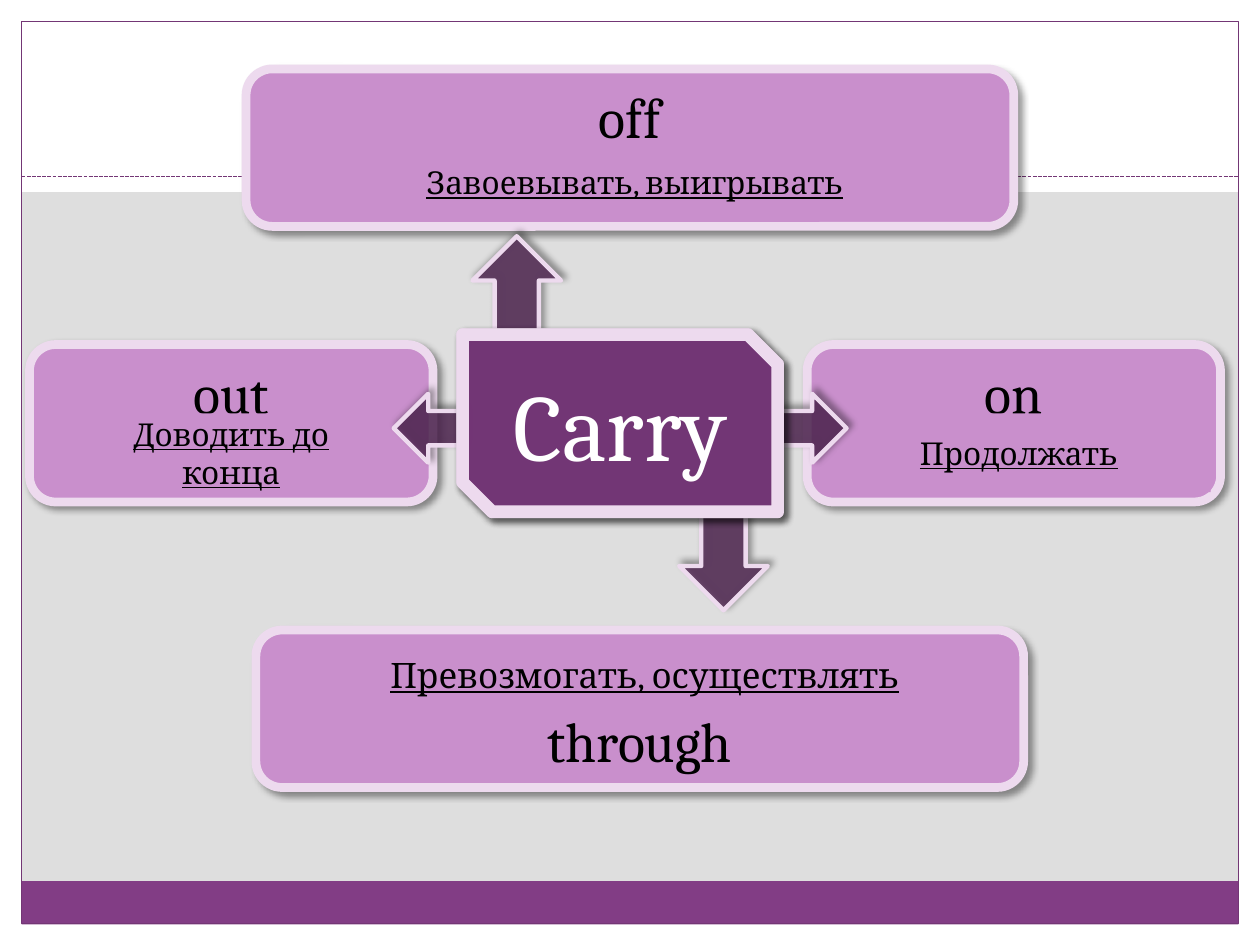
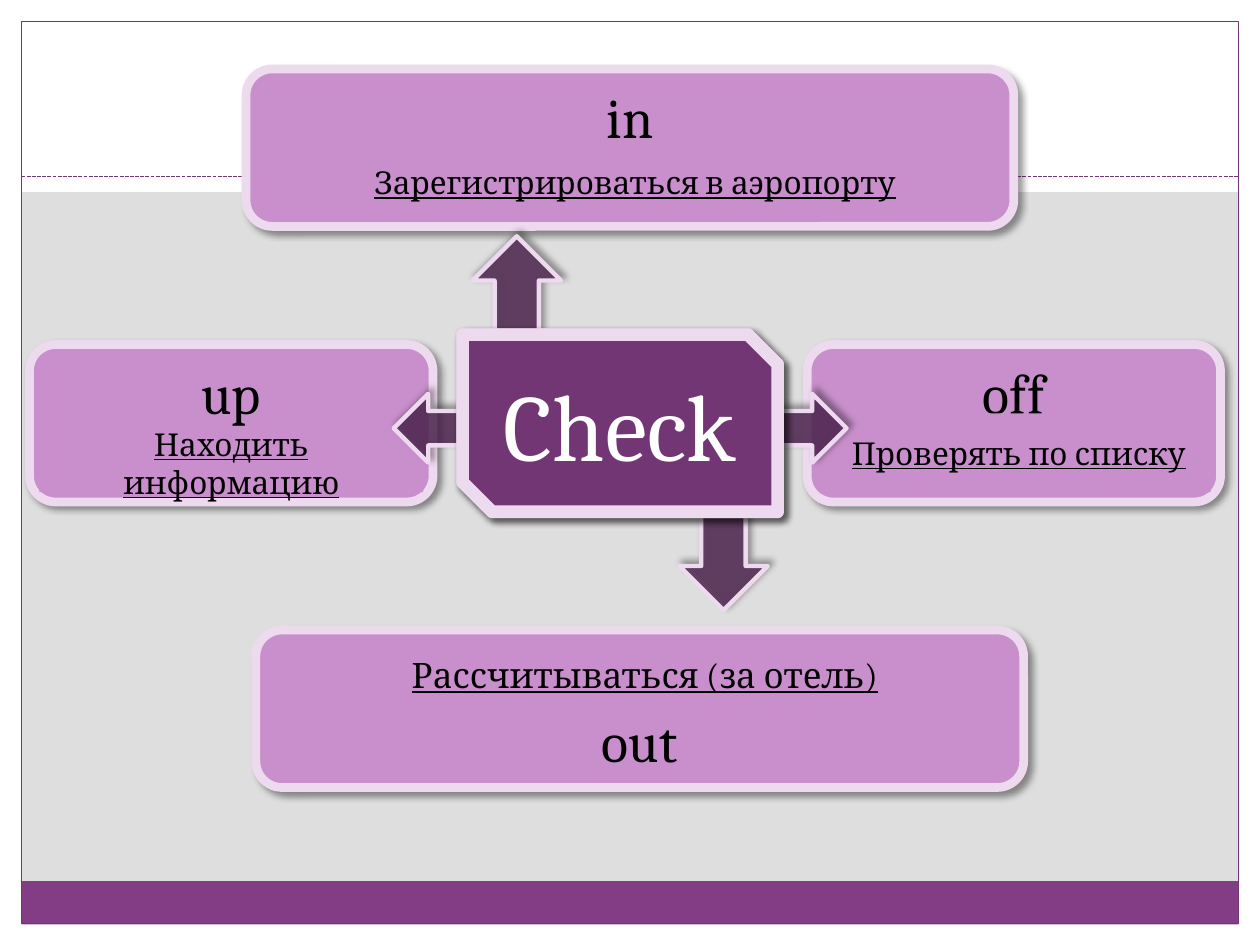
"""Builds two phrasal-verb slides: a central verb with four particles around it."""
from lxml import etree
from pptx import Presentation
from pptx.dml.color import RGBColor
from pptx.enum.dml import MSO_LINE
from pptx.enum.shapes import MSO_CONNECTOR, MSO_SHAPE
from pptx.enum.text import MSO_ANCHOR, MSO_AUTO_SIZE, PP_ALIGN
from pptx.oxml.ns import qn
from pptx.util import Inches, Pt

RECT, ROUND, SNIP = MSO_SHAPE.RECTANGLE, MSO_SHAPE.ROUNDED_RECTANGLE, MSO_SHAPE.SNIP_2_DIAG_RECTANGLE
UP, DOWN, LEFT, RIGHT = MSO_SHAPE.UP_ARROW, MSO_SHAPE.DOWN_ARROW, MSO_SHAPE.LEFT_ARROW, MSO_SHAPE.RIGHT_ARROW
TOP, MIDDLE, BOTTOM = MSO_ANCHOR.TOP, MSO_ANCHOR.MIDDLE, MSO_ANCHOR.BOTTOM
STRAIGHT, DASH = MSO_CONNECTOR.STRAIGHT, MSO_LINE.SQUARE_DOT
CENTER, NO_FIT = PP_ALIGN.CENTER, MSO_AUTO_SIZE.NONE

WHITE = RGBColor(0xFF, 0xFF, 0xFF)
BLACK = RGBColor(0x00, 0x00, 0x00)
GREY = RGBColor(0xDE, 0xDE, 0xDE)
LILAC = RGBColor(0xC9, 0x8F, 0xCC)
PALE = RGBColor(0xED, 0xDA, 0xEE)
PURPLE = RGBColor(0x78, 0x38, 0x7B)
DARK = RGBColor(0x50, 0x25, 0x52)
BAND = RGBColor(0x82, 0x3D, 0x85)
RULE = RGBColor(0x73, 0x36, 0x75)
FONT = "Cambria"

prs = Presentation()
prs.slide_width, prs.slide_height = Inches(10), Inches(7.5)
COLS, ROWS, EDGE = 128, 96, 2.2
UNIT = prs.slide_width / COLS

BANDS = [
    ((0, ROWS - EDGE, COLS, EDGE), WHITE),
    ((0, 0, COLS, 19.5), WHITE),
    ((0, 0, EDGE, ROWS), WHITE),
    ((COLS - EDGE, 0, EDGE, ROWS), WHITE),
    ((EDGE, 89.5, COLS - 2 * EDGE, 4.4), BAND),
]
CARDS = [
    ((82, 35, 42, 16), TOP),
    ((3, 35, 41, 16), TOP),
    ((26, 64, 78, 16), BOTTOM),
    ((25, 7, 78, 16), TOP),
]
ARROWS = [
    (DOWN, (69, 52, 9, 10)),
    (UP, (48, 24, 9, 10)),
    (LEFT, (40, 40, 7, 7)),
    (RIGHT, (79, 40, 7, 7)),
]
HUB = (47, 34, 32, 18)
RIGHT_GLOSS, TOP_GLOSS, BOTTOM_GLOSS = (84, 42, 39, 8), (28, 16, 73, 5), (36, 66, 59, 5)

SLIDES = [
    ("Carry", ["on", "out", "through", "off"], [
        ("Продолжать", RIGHT_GLOSS, 18),
        ("Доводить до конца", (7, 42, 33, 8), 18),
        ("Превозмогать, осуществлять", BOTTOM_GLOSS, 20),
        ("Завоевывать, выигрывать", TOP_GLOSS, 18),
    ]),
    ("Check", ["off", "up", "out", "in"], [
        ("Проверять по списку", RIGHT_GLOSS, 18),
        ("Находить информацию", (4, 44, 39, 6), 18),
        ("Рассчитываться (за отель)", BOTTOM_GLOSS, 20),
        ("Зарегистрироваться в аэропорту", TOP_GLOSS, 18),
    ]),
]


def draw(s, kind, box, fill=None, line=None, width=0.75, alpha=None, angle=None):
    sp = s.shapes.add_shape(kind, *[round(v * UNIT) for v in box])
    if fill is None:
        sp.fill.background()
    else:
        sp.fill.solid()
        sp.fill.fore_color.rgb = fill
    if line is None:
        sp.line.fill.background()
    else:
        sp.line.color.rgb = line
        sp.line.width = Pt(width)
    sp.shadow.inherit = False
    props = sp.element.spPr
    if alpha is not None:
        color = props.find(qn("a:solidFill")).find(qn("a:srgbClr"))
        etree.SubElement(color, qn("a:alpha"), val=str(alpha * 1000))
    if angle is not None:
        shadow = etree.SubElement(
            props.find(qn("a:effectLst")), qn("a:outerShdw"), blurRad=str(Pt(4)),
            dist=str(Pt(3)), dir=str(angle * 60000), algn="tl", rotWithShape="0")
        color = etree.SubElement(shadow, qn("a:srgbClr"), val=str(BLACK))
        etree.SubElement(color, qn("a:alpha"), val="40000")
    return sp


def write(sp, text, size, color=BLACK, anchor=MIDDLE, underline=None):
    tf = sp.text_frame
    tf.word_wrap = True
    tf.auto_size = NO_FIT
    tf.vertical_anchor = anchor
    p = tf.paragraphs[0]
    p.alignment = CENTER
    r = p.add_run()
    r.text = text
    r.font.name = FONT
    r.font.size = Pt(size)
    r.font.color.rgb = color
    r.font.underline = underline


for verb, particles, glosses in SLIDES:
    s = prs.slides.add_slide(prs.slide_layouts[5])
    s.background.fill.solid()
    s.background.fill.fore_color.rgb = GREY

    for box, color in BANDS:
        draw(s, RECT, box, color)
    draw(s, RECT, (EDGE, EDGE, COLS - 2 * EDGE, ROWS - 2 * EDGE), line=RULE)
    ends = [round(v * UNIT) for v in (EDGE, 17.9, COLS - EDGE, 17.9)]
    rule = s.shapes.add_connector(STRAIGHT, *ends)
    rule.line.color.rgb = RULE
    rule.line.width = Pt(0.75)
    rule.line.dash_style = DASH
    etree.SubElement(rule.element.spPr, qn("a:effectLst"))

    for particle, (box, anchor) in zip(particles, CARDS):
        write(draw(s, ROUND, box, LILAC, PALE, 5, angle=45), particle, 32, anchor=anchor)
    for gloss, box, size in glosses:
        write(draw(s, RECT, box, LILAC), gloss, size, underline=True)
    for kind, box in ARROWS:
        draw(s, kind, box, DARK, PALE, 2.5, alpha=79, angle=315)
    for _ in range(2):
        draw(s, SNIP, HUB, PURPLE, PALE, 7.25, alpha=88, angle=45)

    title = s.shapes.title
    title.left, title.top, title.width, title.height = [round(v * UNIT) for v in HUB]
    write(title, verb, 54, WHITE)
    title.element.getparent().append(title.element)

prs.save("out.pptx")
